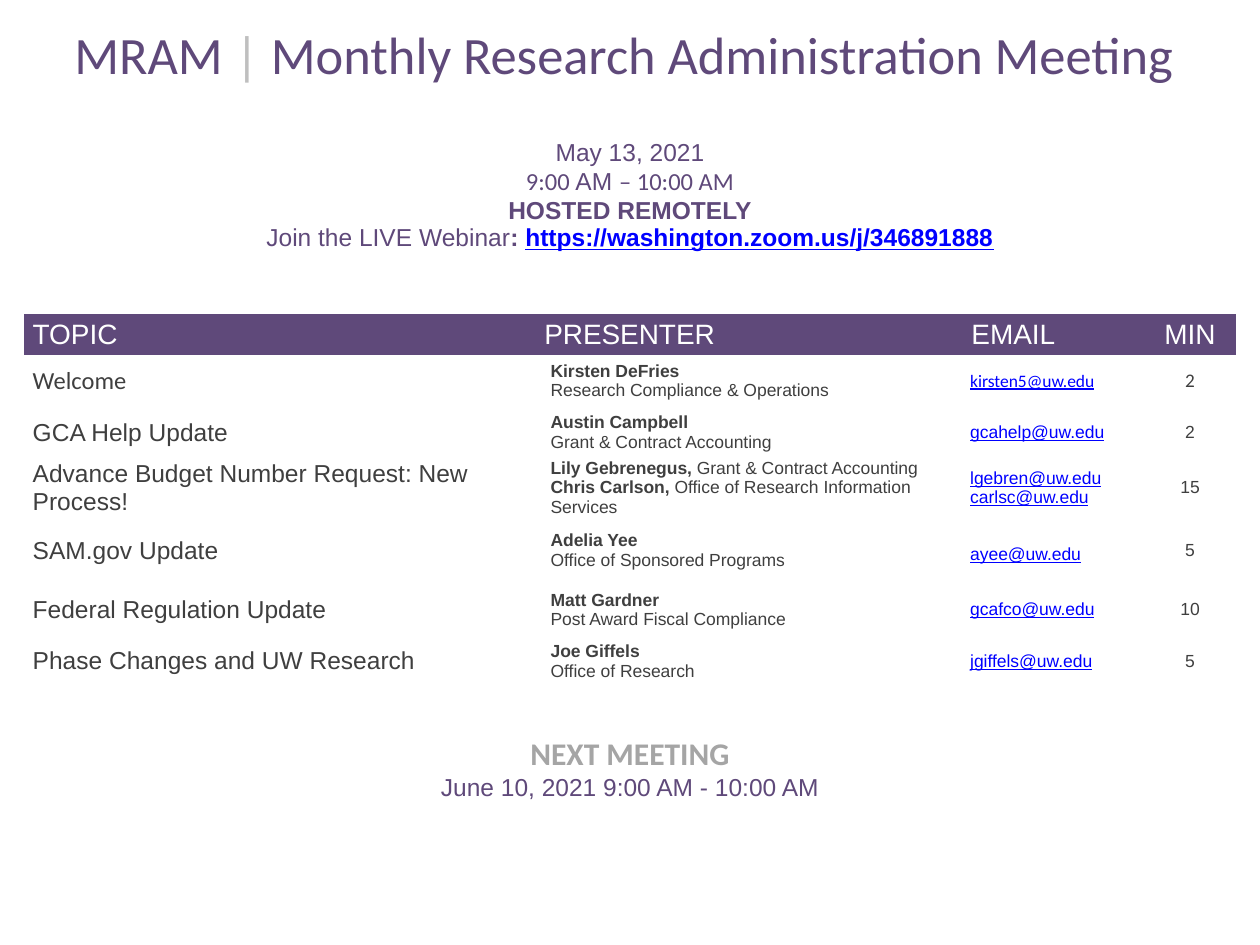
"""Build the agenda slide of a monthly research administration meeting."""
import dataclasses

import lxml.etree
import pptx
import pptx.dml.color
import pptx.enum.text
import pptx.oxml
import pptx.oxml.ns
import pptx.table
import pptx.text.text
import pptx.util

Inches = pptx.util.Inches
ALIGN = pptx.enum.text.PP_ALIGN
ANCHOR = pptx.enum.text.MSO_ANCHOR
COLORS = {
    "purple": "5F497A",
    "rule": "BFBFBF",
    "gray": "A5A5A5",
    "text": "3F3F3F",
    "link": "0000FF",
    "white": "FFFFFF",
}
COLUMN_WIDTHS = (4.06, 3.33, 1.5, 0.73)
TITLE_HEIGHT, DETAILS_HEIGHT, HEADER_HEIGHT, NEXT_HEIGHT = 0.62, 1.79, 0.33, 0.91


@dataclasses.dataclass(frozen=True)
class Run:
    text: str
    size: float = 10
    color: str = "text"
    font: str = "Arial"
    bold: bool = False
    underline: bool = False


@dataclasses.dataclass(frozen=True)
class AgendaItem:
    topic: str
    presenters: list[tuple[str, str]]
    emails: list[str]
    minutes: int
    height: float = 0.41
    email_top: float = 0
    font: str = "Arial"
    minutes_size: float = 10


AGENDA = [
    AgendaItem("Welcome", [("Kirsten DeFries", ""), ("", "Research Compliance & Operations")],
               ["kirsten5@uw.edu"], 2, font="Calibri", minutes_size=11),
    AgendaItem("GCA Help Update", [("Austin Campbell", ""), ("", "Grant & Contract Accounting")],
               ["gcahelp@uw.edu"], 2),
    AgendaItem("Advance Budget Number Request: New Process!",
               [("Lily Gebrenegus,", " Grant & Contract Accounting"),
                ("Chris Carlson, ", "Office of Research Information Services")],
               ["lgebren@uw.edu", "carlsc@uw.edu"], 15, height=0.46),
    AgendaItem("SAM.gov Update", [("Adelia Yee", ""), ("", "Office of Sponsored Programs")],
               ["ayee@uw.edu"], 5, height=0.53, email_top=0.06),
    AgendaItem("Federal Regulation Update", [("Matt Gardner", ""), ("", "Post Award Fiscal Compliance")],
               ["gcafco@uw.edu"], 10),
    AgendaItem("Phase Changes and UW Research", [("Joe Giffels", ""), ("", "Office of Research")],
               ["jgiffels@uw.edu"], 5),
]


def add_text(paragraph: pptx.text.text._Paragraph, text: str, *, size: float, color: str,
             font: str, bold: bool, underline: bool) -> None:
    run = paragraph.add_run()
    run.text = text
    run.font.size = pptx.util.Pt(size)
    run.font.name = font
    run.font.bold = bold
    run.font.underline = underline
    run.font.color.rgb = pptx.dml.color.RGBColor.from_string(COLORS[color])


def set_borders(cell: pptx.table._Cell, ruled: bool) -> None:
    properties = cell._tc.get_or_add_tcPr()
    for side in ("lnL", "lnR", "lnT", "lnB"):
        line = lxml.etree.SubElement(properties, pptx.oxml.ns.qn(f"a:{side}"), w="12700")
        if ruled and side == "lnB":
            fill = lxml.etree.SubElement(line, pptx.oxml.ns.qn("a:solidFill"))
            lxml.etree.SubElement(fill, pptx.oxml.ns.qn("a:srgbClr"), val=COLORS["rule"])
        else:
            lxml.etree.SubElement(line, pptx.oxml.ns.qn("a:noFill"))


def fill_cell(cell: pptx.table._Cell, lines: list[list[Run]], *, fill: str = "white",
              ruled: bool = False, align: ALIGN = ALIGN.LEFT, anchor: ANCHOR = ANCHOR.MIDDLE,
              left: float = 0.07, right: float = 0.07, top: float = 0, bottom: float = 0) -> None:
    set_borders(cell, ruled)
    cell.fill.solid()
    cell.fill.fore_color.rgb = pptx.dml.color.RGBColor.from_string(COLORS[fill])
    cell.vertical_anchor = anchor
    cell.margin_left, cell.margin_right = Inches(left), Inches(right)
    cell.margin_top, cell.margin_bottom = Inches(top), Inches(bottom)
    for index, runs in enumerate(lines):
        frame = cell.text_frame
        paragraph = frame.add_paragraph() if index else frame.paragraphs[0]
        paragraph.alignment = align
        for run in runs:
            add_text(paragraph, **dataclasses.asdict(run))


def fill_banner(table: pptx.table.Table, row: int, lines: list[list[Run]], bottom: float = 0) -> None:
    cell = table.cell(row, 0)
    cell.merge(table.cell(row, len(COLUMN_WIDTHS) - 1))
    fill_cell(cell, lines, align=ALIGN.CENTER, anchor=ANCHOR.BOTTOM, bottom=bottom)


def fill_header(table: pptx.table.Table, row: int) -> None:
    for column, label in enumerate(("TOPIC", "PRESENTER", "EMAIL", "MIN")):
        fill_cell(table.cell(row, column), [[Run(label, 16, "white")]], fill="purple",
                  align=ALIGN.CENTER if label == "MIN" else ALIGN.LEFT,
                  left=0.13 if label == "EMAIL" else 0.07)


def fill_agenda_row(table: pptx.table.Table, row: int, item: AgendaItem) -> None:
    topic, presenter, email, minutes = (table.cell(row, column) for column in range(4))
    presenters = [[Run(text, bold=bold) for text, bold in ((name, True), (office, False)) if text]
                  for name, office in item.presenters]
    emails = [[Run(address, color="link", font=item.font, underline=True)] for address in item.emails]
    fill_cell(topic, [[Run(item.topic, 14, font=item.font)]], ruled=True)
    fill_cell(presenter, presenters, ruled=True, left=0.12, right=0.12)
    fill_cell(email, emails, ruled=True, left=0.12, right=0.12, top=item.email_top)
    fill_cell(minutes, [[Run(str(item.minutes), item.minutes_size, font=item.font)]],
              ruled=True, align=ALIGN.CENTER)


def main() -> None:
    presentation = pptx.Presentation()
    presentation.slide_width, presentation.slide_height = Inches(10), Inches(7.5)
    slide = presentation.slides.add_slide(presentation.slide_layouts[6])
    heights = [TITLE_HEIGHT, DETAILS_HEIGHT, HEADER_HEIGHT,
               *(item.height for item in AGENDA), NEXT_HEIGHT]
    table = slide.shapes.add_table(len(heights), len(COLUMN_WIDTHS), Inches(0.19), Inches(0.08),
                                   Inches(sum(COLUMN_WIDTHS)), Inches(sum(heights))).table
    table.horz_banding = False
    table.first_row = False
    for column, width in zip(table.columns, COLUMN_WIDTHS):
        column.width = Inches(width)
    for row, height in zip(table.rows, heights):
        row.height = Inches(height)

    fill_banner(table, 0, [[
        Run("MRAM ", 30, "purple", "Calibri"),
        Run("|", 30, "rule", "Calibri"),
        Run(" Monthly Research Administration Meeting ", 30, "purple", "Calibri"),
    ]])
    fill_banner(table, 1, [
        [Run("May 13, 2021", 14, "purple")],
        [Run("9:00 ", 14, "purple", "Calibri"), Run("AM ", 14, "purple"),
         Run("– 10:00 AM", 14, "purple", "Calibri")],
        [Run("HOSTED REMOTELY", 14, "purple", bold=True)],
        [Run("Join the LIVE Webinar", 14, "purple"), Run(": ", 14, "purple", bold=True),
         Run("https://washington.zoom.us/j/346891888", 14, "link", bold=True, underline=True)],
    ], bottom=0.49)
    fill_header(table, 2)
    for row, item in enumerate(AGENDA, start=3):
        fill_agenda_row(table, row, item)
    fill_banner(table, len(heights) - 1, [
        [Run("NEXT MEETING", 18, "gray", "Calibri", bold=True)],
        [Run("June 10, 2021 9:00 AM - 10:00 AM", 14, "purple")],
    ])
    presentation.save("out.pptx")


if __name__ == "__main__":
    main()
